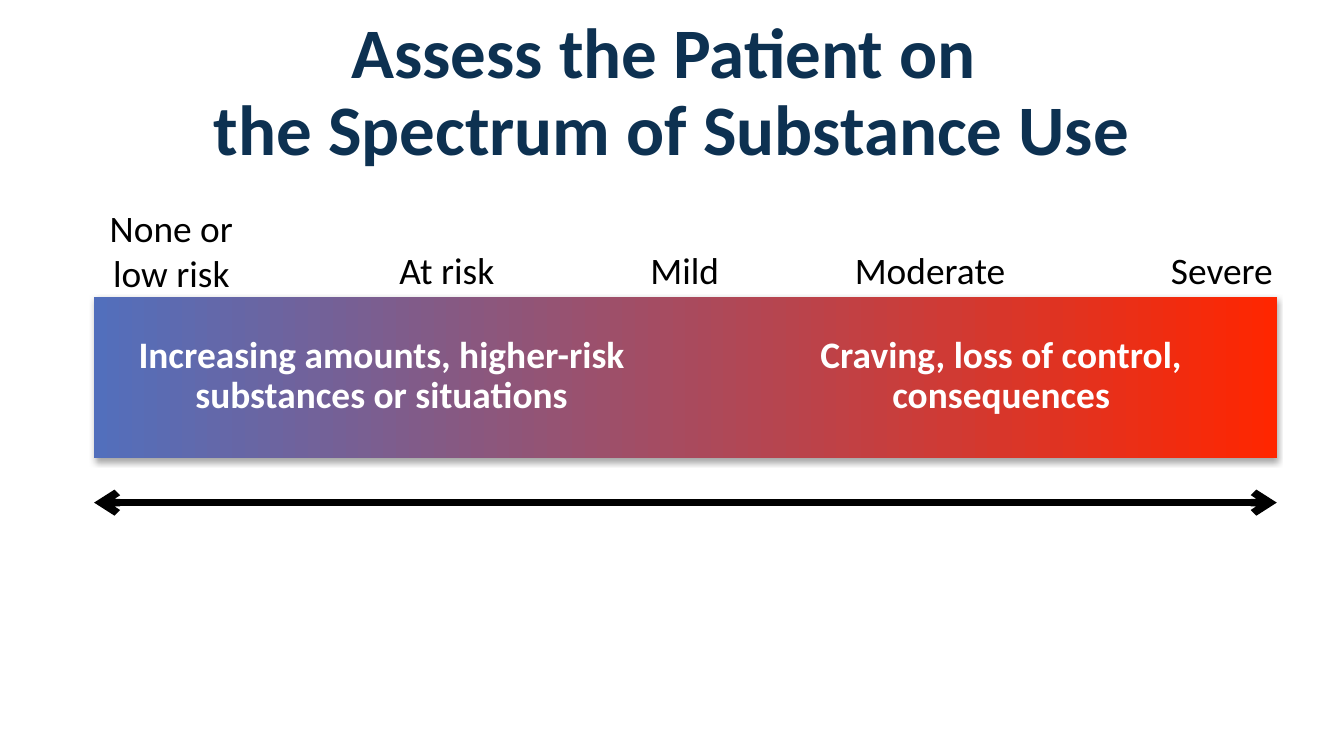
import pptx
import pptx.dml.color
import pptx.enum.dml
import pptx.enum.shapes
import pptx.enum.text
import pptx.oxml
import pptx.oxml.ns
import pptx.util

Inches = pptx.util.Inches
Pt = pptx.util.Pt
RGBColor = pptx.dml.color.RGBColor
ALIGN = pptx.enum.text.PP_ALIGN
ANCHOR = pptx.enum.text.MSO_ANCHOR

NAVY = RGBColor(0x0D, 0x31, 0x51)
BLUE = RGBColor(0x52, 0x6F, 0xBC)
RED = RGBColor(0xFF, 0x26, 0x00)
WHITE = RGBColor(0xFF, 0xFF, 0xFF)
BLACK = RGBColor(0, 0, 0)

TITLE_FONT = {"name": "Calibri", "size": Pt(38), "bold": True, "color": NAVY}
LEVEL_FONT = {"name": "Calibri", "size": Pt(20), "bold": False, "color": BLACK}
SIGNS_FONT = {"name": "Calibri", "size": Pt(20), "bold": True, "color": WHITE}

LEVELS = [
    ("None or low risk", 0, 1.15, 0.71, ALIGN.CENTER),
    ("At risk", 2.18, 0.89, 0.4, ALIGN.CENTER),
    ("Mild", 4.09, 0.61, 0.4, ALIGN.CENTER),
    ("Moderate", 5.57, 1.3, 0.4, ALIGN.CENTER),
    ("Severe", 7.73, 1.07, 0.4, ALIGN.RIGHT),
]
SIGNS = [
    ("Increasing amounts, higher-risk substances or situations", 0, 4.28, 0.57),
    ("Craving, loss of control, consequences", 4.7, 4.1, 0.64),
]


def format_paragraph(paragraph, font_format, align, line_spacing):
    paragraph.alignment = align
    paragraph.line_spacing = line_spacing
    for run in paragraph.runs:
        for key, value in font_format.items():
            if key == "color":
                run.font.color.rgb = value
            else:
                setattr(run.font, key, value)


def add_label(slide, text, box, font_format, align=ALIGN.CENTER, line_spacing=1.0):
    label = slide.shapes.add_textbox(*map(Inches, box))
    frame = label.text_frame
    frame.word_wrap = True
    for side in ("left", "top", "right", "bottom"):
        setattr(frame, f"margin_{side}", Inches(0.03))
    frame.text = text
    format_paragraph(frame.paragraphs[0], font_format, align, line_spacing)


def place_title(slide, text, box):
    title = slide.shapes.title
    for key, value in zip(("left", "top", "width", "height"), box):
        setattr(title, key, Inches(value))
    frame = title.text_frame
    frame.text = text
    frame.auto_size = pptx.enum.text.MSO_AUTO_SIZE.NONE
    frame.vertical_anchor = ANCHOR.MIDDLE
    format_paragraph(frame.paragraphs[0], TITLE_FONT, ALIGN.CENTER, 0.9)


def add_levels(slide, left, bottom):
    for text, offset, width, height, align in LEVELS:
        add_label(slide, text, (left + offset, bottom - height, width, height),
                  LEVEL_FONT, align)


def add_spectrum_bar(slide, left, top, width, height):
    bar = slide.shapes.add_shape(pptx.enum.shapes.MSO_SHAPE.RECTANGLE,
                                 *map(Inches, (left, top, width, height)))
    bar.line.fill.background()
    bar.fill.gradient()
    bar.fill.gradient_angle = 0
    for stop, position, color in zip(bar.fill.gradient_stops, (0, 1), (BLUE, RED)):
        stop.position = position
        stop.color.rgb = color
    bar.shadow.inherit = False
    effects = bar._element.spPr.find(pptx.oxml.ns.qn("a:effectLst"))
    effects.append(pptx.oxml.parse_xml(
        f'<a:outerShdw {pptx.oxml.ns.nsdecls("a")} blurRad="{Pt(3)}" dist="{Pt(1.8)}"'
        ' dir="5400000" rotWithShape="0"><a:srgbClr val="000000">'
        '<a:alpha val="35000"/></a:srgbClr></a:outerShdw>'))


def add_signs(slide, left, top):
    for text, offset, width, height in SIGNS:
        add_label(slide, text, (left + offset, top, width, height),
                  SIGNS_FONT, line_spacing=0.9)


def add_range_arrow(slide, left, y, width):
    arrow = slide.shapes.add_connector(pptx.enum.shapes.MSO_CONNECTOR.STRAIGHT,
                                       *map(Inches, (left, y, left + width, y)))
    arrow.line.color.rgb = BLACK
    arrow.line.width = Pt(4)
    properties = arrow._element.spPr
    outline = properties.get_or_add_ln()
    namespace = pptx.oxml.ns.nsdecls("a")
    for end in ("headEnd", "tailEnd"):
        outline.append(pptx.oxml.parse_xml(f'<a:{end} {namespace} type="arrow"/>'))
    properties.append(pptx.oxml.parse_xml(f"<a:effectLst {namespace}/>"))


def build_spectrum_slide(deck):
    slide = deck.slides.add_slide(deck.slide_layouts[5])
    left, top, width, height = 0.7, 2.21, 8.8, 1.2
    place_title(slide, "Assess the Patient on \vthe Spectrum of Substance Use",
                (0.5, 0.23, 9, 0.94))
    add_spectrum_bar(slide, left, top, width, height)
    add_range_arrow(slide, left, top + height + 0.33, width)
    add_signs(slide, left, top + 0.26)
    add_levels(slide, left, top)


def main():
    deck = pptx.Presentation()
    deck.slide_width = Inches(10)
    deck.slide_height = deck.slide_width * 9 // 16
    build_spectrum_slide(deck)
    deck.save("out.pptx")


if __name__ == "__main__":
    main()
